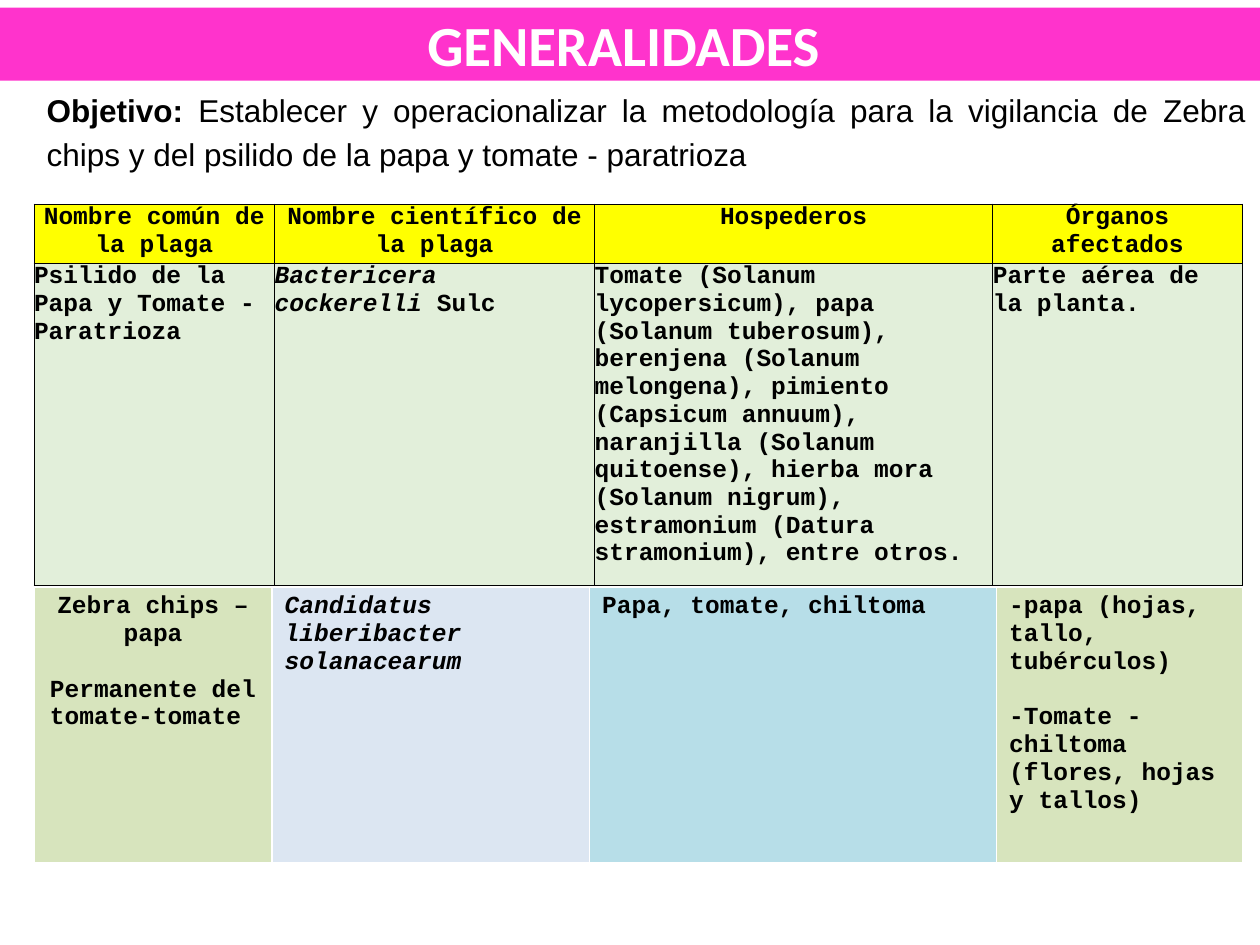
from dataclasses import dataclass

from pptx import Presentation
from pptx.dml.color import RGBColor as RGB
from pptx.enum.text import MSO_ANCHOR as Anchor, MSO_AUTO_SIZE as Auto, PP_ALIGN as Align
from pptx.oxml import parse_xml
from pptx.oxml.ns import nsdecls
from pptx.util import Inches, Pt


@dataclass(frozen=True)
class Theme:
    pink: str = "FF33CC"
    white: str = "FFFFFF"
    black: str = "000000"
    yellow: str = "FFFF00"
    mint: str = "E2EFDA"
    olive: str = "D7E4BD"
    blue: str = "DCE6F2"
    aqua: str = "B7DEE8"
    title: float = 32.4
    body: float = 18
    cell: float = 14
    gap: float = 16


THEME = Theme()
CELL = {"name": "Courier New", "size": Pt(THEME.cell), "bold": True}

# A cell is a list of paragraphs; a paragraph is a list of (text, italic) runs.
HEADS = ["Nombre común de la plaga", "Nombre científico de la plaga",
         "Hospederos", "Órganos afectados"]
HOSTS = ("Tomate (Solanum lycopersicum), papa (Solanum tuberosum), berenjena "
         "(Solanum melongena), pimiento (Capsicum annuum), naranjilla (Solanum "
         "quitoense), hierba mora (Solanum nigrum), estramonium (Datura "
         "stramonium), entre otros.")
PEST = [[[(head, False)]] for head in HEADS], [
    [[("Psilido de la Papa y Tomate - Paratrioza", False)]],
    [[("Bactericera cockerelli ", True), ("Sulc", False)]],
    [[(HOSTS, False)]],
    [[("Parte aérea de la planta.", False)]],
]
ZEBRA = [[
    [[("Zebra chips –papa", False)], [("Permanente del tomate-tomate ", False)]],
    [[("Candidatus liberibacter solanacearum", True)]],
    [[("Papa, tomate, chiltoma", False)]],
    [[("-papa (hojas, tallo, tubérculos)", False)],
     [("-Tomate - chiltoma (flores, hojas y tallos)", False)]],
]]


def place(shape, box):
    for key, value in zip(("left", "top", "width", "height"), box):
        setattr(shape, key, Inches(value))


def write(para, text, color, **style):
    run = para.add_run()
    run.text = text
    for key, value in style.items():
        setattr(run.font, key, value)
    run.font.color.rgb = RGB.from_string(color)


def banner(shape, box):
    place(shape, box)
    shape.fill.solid()
    shape.fill.fore_color.rgb = RGB.from_string(THEME.pink)
    frame = shape.text_frame
    frame.auto_size, frame.vertical_anchor = Auto.NONE, Anchor.MIDDLE
    para = frame.paragraphs[0]
    para.alignment = Align.CENTER
    write(para, "GENERALIDADES ", THEME.white, name="Calibri", size=Pt(THEME.title), bold=True)


def goal(shape, box):
    place(shape, box)
    frame = shape.text_frame
    frame.auto_size, frame.vertical_anchor = Auto.NONE, Anchor.TOP
    para = frame.paragraphs[0]
    props = para._p.get_or_add_pPr()
    props.set("marL", "0")
    props.set("indent", "0")
    props.append(parse_xml(f"<a:buNone {nsdecls('a')}/>"))
    for key, value in {"alignment": Align.JUSTIFY, "line_spacing": 1.15,
                       "space_before": Pt(0)}.items():
        setattr(para, key, value)
    style = {"name": "Arial", "size": Pt(THEME.body)}
    write(para, "Objetivo: ", THEME.black, bold=True, **style)
    write(para, "Establecer y operacionalizar la metodología para la vigilancia de "
          "Zebra chips y del psilido de la papa y tomate - paratrioza",
          THEME.black, bold=False, **style)


def edge(cell, color, widths):
    """Draw the left, right, top and bottom borders, in that order."""
    props = cell._tc.get_or_add_tcPr()
    for side, width in zip("LRTB", widths):
        props.append(parse_xml(
            f'<a:ln{side} {nsdecls("a")} w="{Pt(width)}"><a:solidFill>'
            f'<a:srgbClr val="{color}"/></a:solidFill></a:ln{side}>'))


def fill(cell, paras, color, align):
    cell.fill.solid()
    cell.fill.fore_color.rgb = RGB.from_string(color)
    frame = cell.text_frame
    for n, runs in enumerate(paras):
        para = frame.add_paragraph() if n else frame.paragraphs[0]
        para.alignment = align
        if n:
            para.space_before = Pt(THEME.gap)
        for text, slant in runs:
            write(para, text, THEME.black, italic=slant, **CELL)


def grid(slide, box, cols, rows, data, fills, mid, line, inset=None):
    """Add a table; mid holds the (row, column) pairs that are centred."""
    table = slide.shapes.add_table(len(rows), len(cols), *map(Inches, box)).table
    table.first_row = table.horz_banding = False
    for col, width in zip(table.columns, cols):
        col.width = Inches(width)
    for r, (row, height) in enumerate(zip(table.rows, rows)):
        row.height = Inches(height)
        for c, cell in enumerate(row.cells):
            if inset is not None:
                for side in ("left", "right", "top", "bottom"):
                    setattr(cell, f"margin_{side}", Inches(inset))
            edge(cell, *line)
            fill(cell, data[r][c], fills[r][c],
                 Align.CENTER if (r, c) in mid else Align.LEFT)


def main():
    deck = Presentation()
    deck.slide_width, deck.slide_height = Inches(10), Inches(7.5)
    slide = deck.slides.add_slide(deck.slide_layouts[1])
    banner(slide.shapes.title, (0, 0.06, 10, 0.58))
    goal(slide.placeholders[1], (0.27, 0.63, 9.72, 0.8))
    grid(slide, (0.27, 1.62, 9.59, 3.03), (1.91, 2.54, 3.16, 1.98), (0.47, 2.56),
         PEST, [[THEME.yellow] * 4, [THEME.mint] * 4],
         {(0, c) for c in range(4)}, (THEME.black, [0.5] * 4), inset=0)
    grid(slide, (0.27, 4.66, 9.59, 2.2), (1.89, 2.52, 3.23, 1.95), (2.2,),
         ZEBRA, [[THEME.olive, THEME.blue, THEME.aqua, THEME.olive]],
         {(0, 0)}, (THEME.white, [1, 1, 1, 3]))
    deck.save("out.pptx")


if __name__ == "__main__":
    main()
